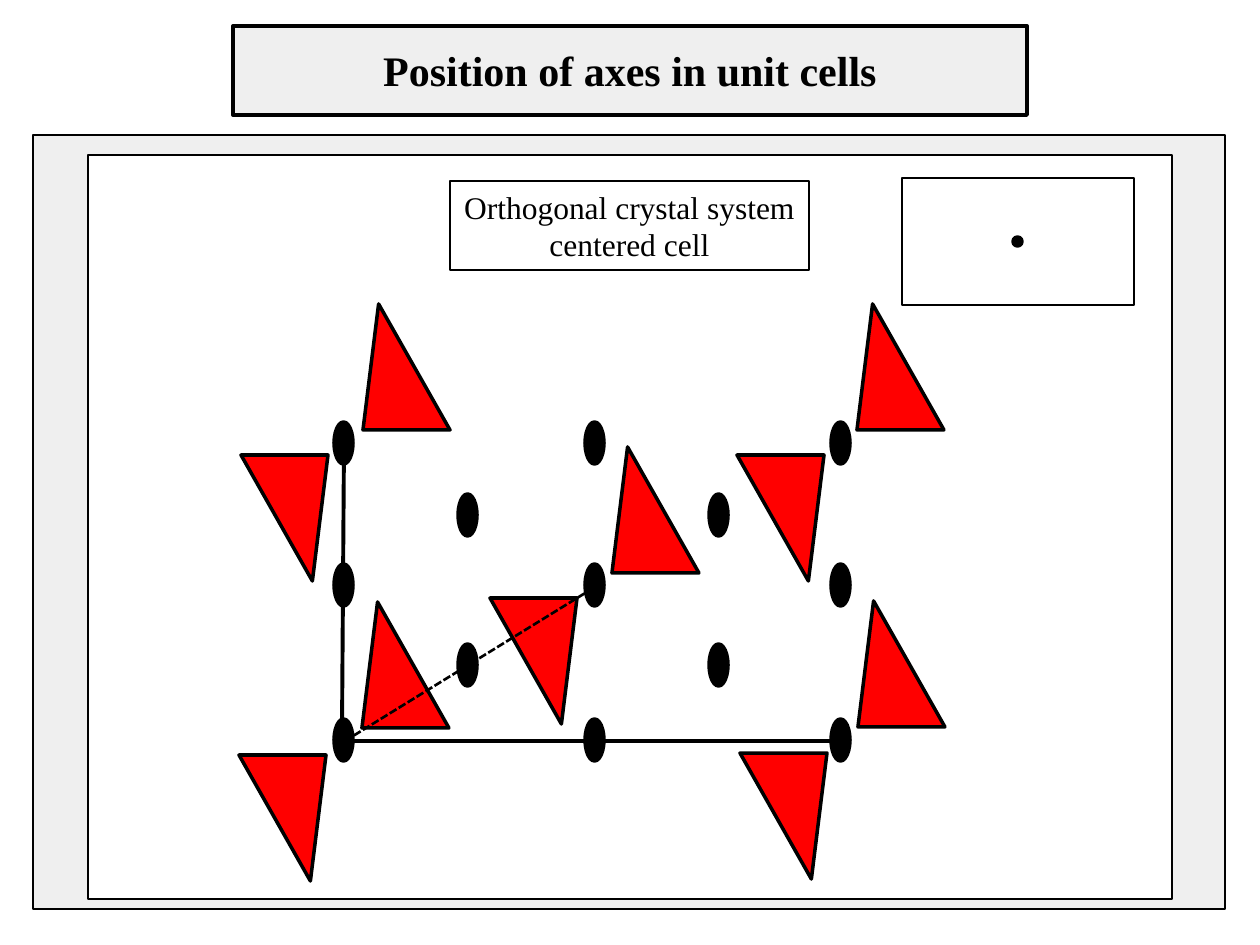
from lxml import etree
from pptx import Presentation
from pptx.dml.color import RGBColor
from pptx.enum.dml import MSO_LINE
from pptx.enum.shapes import MSO_CONNECTOR, MSO_SHAPE
from pptx.enum.text import MSO_ANCHOR, MSO_AUTO_SIZE, PP_ALIGN
from pptx.oxml.ns import qn
from pptx.util import Emu, Pt

RECT = MSO_SHAPE.RECTANGLE
OVAL = MSO_SHAPE.OVAL
TRIANGLE = MSO_SHAPE.ISOSCELES_TRIANGLE
PARALLELOGRAM = MSO_SHAPE.PARALLELOGRAM
STRAIGHT = MSO_CONNECTOR.STRAIGHT
DASH = MSO_LINE.SQUARE_DOT
CENTER = PP_ALIGN.CENTER
MIDDLE = MSO_ANCHOR.MIDDLE
FIT_SHAPE = MSO_AUTO_SIZE.SHAPE_TO_FIT_TEXT

SCALE = 914400 / 126
FONT = "Times New Roman"
BLACK, WHITE, GRAY, RED = "000000", "FFFFFF", "EFEFEF", "FF0000"

PANELS = [
    ((233, 26, 794, 89), GRAY, 2.25),
    ((33, 135, 1192, 774), GRAY, 1.5),
    ((88, 155, 1084, 744), WHITE, 1.5),
]
EDGES = [((344, 447), (342, 732)), ((345, 741), (840, 741))]
DIAGONAL = ((345, 741), (595, 587))
MOTIFS = [
    ((362, 602), (239, 755)),
    ((363, 304), (241, 455)),
    ((858, 601), (740, 753)),
    ((857, 304), (737, 455)),
    ((612, 447), (490, 598)),
]
AXIS_GRIDS = [
    ((334, 585, 831), (422, 564, 719)),
    ((458, 709), (494, 644)),
]
DOTS = [(1013, 237), (587, 586)]


def px(n):
    return Emu(round(n * SCALE))


def rgb(value):
    return RGBColor.from_string(value)


def add_shape(s, kind, box, fill=None, width=2):
    sp = s.shapes.add_shape(kind, *map(px, box))
    sp.shadow.inherit = False
    if fill:
        sp.fill.solid()
        sp.fill.fore_color.rgb = rgb(fill)
    else:
        sp.fill.background()
    sp.line.color.rgb = rgb(BLACK)
    sp.line.width = Pt(width)
    return sp


def add_line(s, start, end, width, dash=None):
    line = s.shapes.add_connector(STRAIGHT, *map(px, start + end))
    line.line.color.rgb = rgb(BLACK)
    line.line.width = Pt(width)
    if dash:
        line.line.dash_style = dash
    etree.SubElement(line.element.spPr, qn("a:effectLst"))


def add_motif(s, upper, lower):
    for corner, rotation in ((upper, 0), (lower, 180)):
        sp = add_shape(s, TRIANGLE, corner + (87, 126), RED)
        sp.adjustments[0] = 0.18
        sp.rotation = rotation


def set_text(sp, lines, size, bold=False):
    tf = sp.text_frame
    frame = {"word_wrap": False, "auto_size": FIT_SHAPE, "vertical_anchor": MIDDLE}
    for name, value in frame.items():
        setattr(tf, name, value)
    for i, line in enumerate(lines):
        p = tf.add_paragraph() if i else tf.paragraphs[0]
        p.alignment = CENTER
        r = p.add_run()
        r.text = line
        for name, value in {"name": FONT, "size": Pt(size), "bold": bold}.items():
            setattr(r.font, name, value)
        r.font.color.rgb = rgb(BLACK)


def set_title(s, text):
    title = s.shapes.title
    box = dict(zip(("left", "top", "width", "height"), (368, 38, 524, 63)))
    for name, value in box.items():
        setattr(title, name, px(value))
    set_text(title, [text], 24, bold=True)
    title.element.getparent().append(title.element)


def main():
    prs = Presentation()
    prs.slide_width, prs.slide_height = px(1260), px(945)
    s = prs.slides.add_slide(prs.slide_layouts[5])

    for box, fill, width in PANELS:
        add_shape(s, RECT, box, fill, width)
    set_title(s, "Position of axes in unit cells")

    label = add_shape(s, RECT, (450, 181, 359, 89), width=0.75)
    set_text(label, ["Orthogonal crystal system", "centered cell"], 18)
    cell = add_shape(s, PARALLELOGRAM, (902, 178, 232, 127), width=1.5)
    cell.adjustments[0] = 0

    for start, end in EDGES:
        add_line(s, start, end, 2.25)
    for upper, lower in MOTIFS:
        add_motif(s, upper, lower)
    add_line(s, *DIAGONAL, 1.5, DASH)
    for columns, rows in AXIS_GRIDS:
        for y in rows:
            for x in columns:
                add_shape(s, OVAL, (x, y, 19, 42), BLACK)
    for dot in DOTS:
        add_shape(s, OVAL, dot + (9, 9), BLACK)

    prs.save("out.pptx")


if __name__ == "__main__":
    main()
